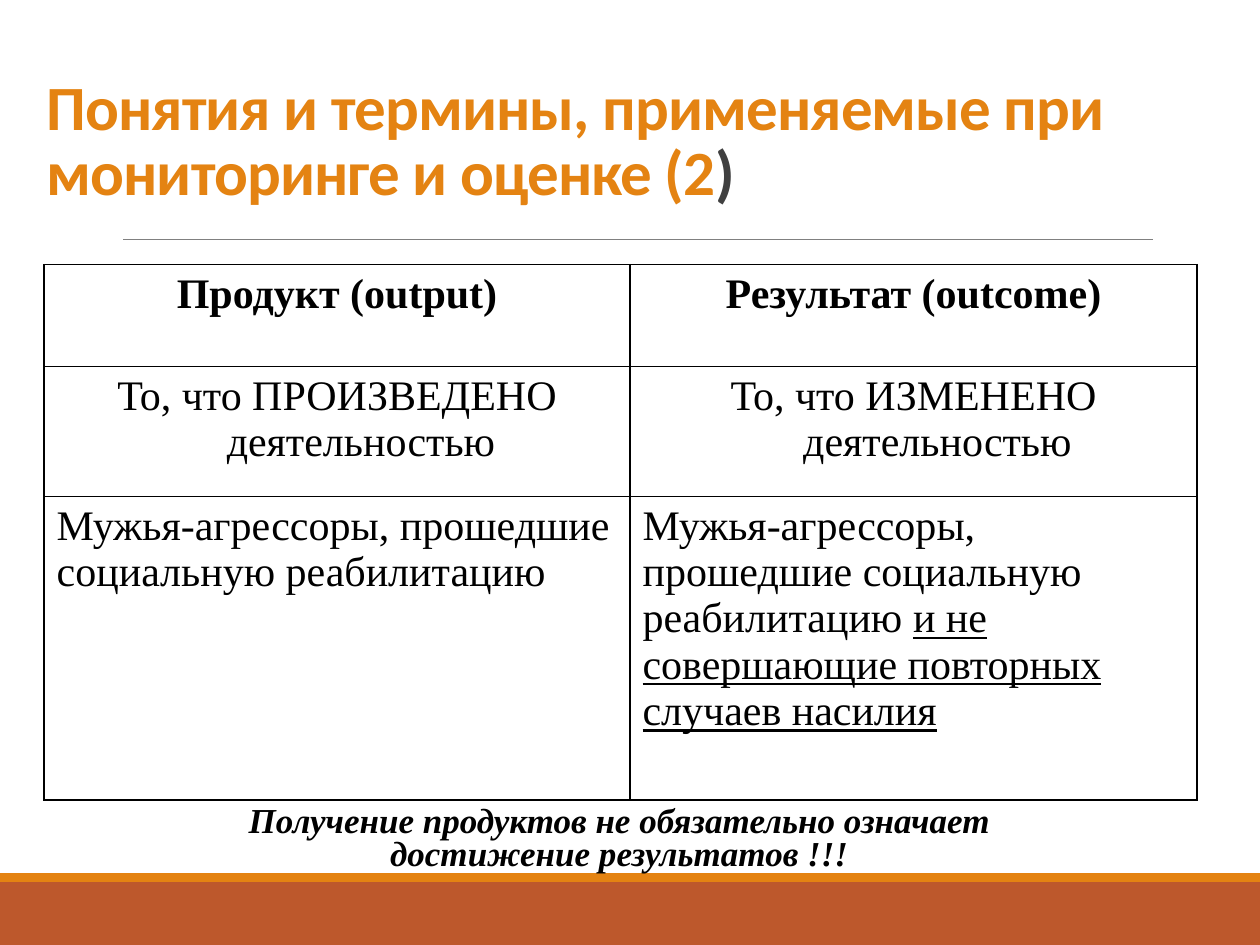
from lxml.etree import SubElement
from pptx import Presentation
from pptx.dml.color import RGBColor
from pptx.enum.shapes import MSO_CONNECTOR, MSO_SHAPE
from pptx.enum.text import MSO_ANCHOR, PP_ALIGN
from pptx.oxml.ns import qn
from pptx.util import Inches, Pt

COLORS = {"orange": "E48312", "rust": "BD582C", "rule": "808080",
          "dark": "404040", "black": "000000"}
SERIF = "Times New Roman"


def add_run(p, text, color="black", **font):
    r = p.add_run()
    r.text = text
    r.font.color.rgb = RGBColor.from_string(COLORS[color])
    for name, value in font.items():
        setattr(r.font, name, value)
    return r


def set_borders(cell, width):
    tcPr = cell._tc.get_or_add_tcPr()
    for i, side in enumerate(("lnL", "lnR", "lnT", "lnB")):
        ln = tcPr.makeelement(qn(f"a:{side}"), {"w": str(Pt(width))})
        fill = SubElement(ln, qn("a:solidFill"))
        SubElement(fill, qn("a:srgbClr"), val=COLORS["black"])
        tcPr.insert(i, ln)


prs = Presentation()
prs.slide_width, prs.slide_height = Inches(10), Inches(7.5)
s = prs.slides.add_slide(prs.slide_layouts[6])

# Footer bands and the rule under the title
for top, height, color in ((7, 0.5, "rust"), (6.93, 0.07, "orange")):
    band = s.shapes.add_shape(MSO_SHAPE.RECTANGLE, 0, Inches(top),
                              prs.slide_width, Inches(height))
    band.shadow.inherit = False
    band.fill.solid()
    band.fill.fore_color.rgb = RGBColor.from_string(COLORS[color])
    band.line.fill.background()

rule = s.shapes.add_connector(MSO_CONNECTOR.STRAIGHT, Inches(0.98), Inches(1.9),
                              Inches(9.15), Inches(1.9))
rule.line.color.rgb = RGBColor.from_string(COLORS["rule"])
rule.line.width = Pt(0.5)
SubElement(rule._element.spPr, qn("a:effectLst"))

# Title
title = s.shapes.add_textbox(Inches(0.27), Inches(0.36), Inches(9.5), Inches(1.34))
tf = title.text_frame
tf.word_wrap = True
tf.vertical_anchor = MSO_ANCHOR.BOTTOM
p = tf.paragraphs[0]
p.line_spacing = 0.85
for text, color in (("Понятия и термины, применяемые при мониторинге и оценке (2", "orange"),
                    (")", "dark")):
    r = add_run(p, text, color, name="Calibri", size=Pt(36), bold=True)
    r.font._element.set("spc", "-50")

# Comparison table
rows = [
    ["Продукт (output)", "Результат (outcome)"],
    ["То, что ПРОИЗВЕДЕНО деятельностью", "То, что ИЗМЕНЕНО деятельностью"],
    ["Мужья-агрессоры, прошедшие социальную реабилитацию",
     "Мужья-агрессоры, прошедшие социальную реабилитацию "],
]
table = s.shapes.add_table(3, 2, Inches(0.35), Inches(2.1),
                           Inches(9.15), Inches(4.25)).table
for column, width in zip(table.columns, (4.65, 4.5)):
    column.width = Inches(width)
for row, height in zip(table.rows, (0.81, 1.03, 2.41)):
    row.height = Inches(height)

for i, texts in enumerate(rows):
    for j, text in enumerate(texts):
        cell = table.cell(i, j)
        cell.fill.background()
        set_borders(cell, 1)
        p = cell.text_frame.paragraphs[0]
        add_run(p, text, name=SERIF, size=Pt(24), bold=i == 0)
        if i < 2:
            p.alignment = PP_ALIGN.CENTER
            pPr = p._p.get_or_add_pPr()
            pPr.set("marL", str(Inches(0.38)))
            pPr.set("indent", str(-Inches(0.38)))
add_run(table.cell(2, 1).text_frame.paragraphs[0],
        "и не совершающие повторных случаев насилия",
        name=SERIF, size=Pt(24), bold=False, underline=True)

# Conclusion below the table
note = s.shapes.add_textbox(Inches(1.53), Inches(6.35), Inches(6.77), Inches(0.64))
tf = note.text_frame
tf.word_wrap = True
p = tf.paragraphs[0]
p.alignment = PP_ALIGN.CENTER
p.line_spacing = 0.8
p.space_before = Pt(4)
add_run(p, "Получение продуктов не обязательно означает достижение результатов !!!",
        name=SERIF, size=Pt(20), bold=True, italic=True)

prs.save("out.pptx")
